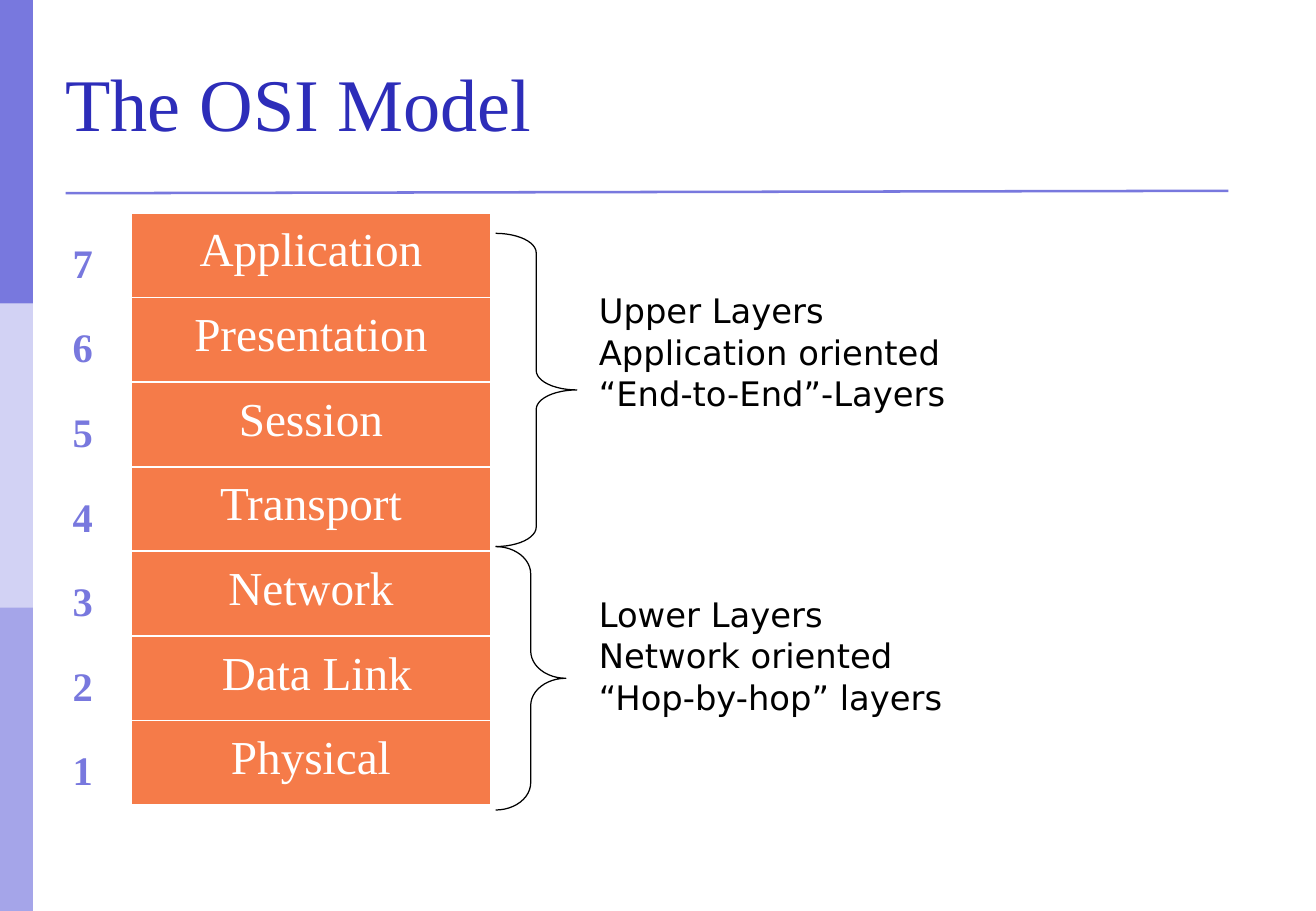
"""Build the slide showing the seven layers of the OSI model."""
from lxml import etree
from pptx import Presentation
from pptx.dml.color import RGBColor
from pptx.enum.shapes import MSO_CONNECTOR, MSO_SHAPE
from pptx.enum.text import MSO_ANCHOR, PP_ALIGN
from pptx.oxml.ns import qn
from pptx.util import Cm, Pt

RECTANGLE = MSO_SHAPE.RECTANGLE
ROUNDED = MSO_SHAPE.ROUNDED_RECTANGLE
BRACE = MSO_SHAPE.RIGHT_BRACE
STRAIGHT = MSO_CONNECTOR.STRAIGHT
TOP, MIDDLE = MSO_ANCHOR.TOP, MSO_ANCHOR.MIDDLE
LEFT, CENTER = PP_ALIGN.LEFT, PP_ALIGN.CENTER

SERIF, SANS = "Times New Roman", "DejaVu Sans"
VIOLET = "7878DE"


def color(hex_code):
    return RGBColor.from_string(hex_code)


def write(shape, text, *, size, ink, font=SERIF, bold=False, align=LEFT,
          anchor=TOP, spacing=0.93, insets=(0.25, 0.18, 0.25, 0.13)):
    frame = shape.text_frame
    frame.word_wrap = True
    frame.vertical_anchor = anchor
    (frame.margin_left, frame.margin_top,
     frame.margin_right, frame.margin_bottom) = map(Cm, insets)
    frame.text = text
    for paragraph in frame.paragraphs:
        paragraph.alignment = align
        paragraph.line_spacing = spacing
        for run in paragraph.runs:
            run.font.name = font
            run.font.size = Pt(size)
            run.font.bold = bold
            run.font.color.rgb = color(ink)


prs = Presentation()
prs.slide_width, prs.slide_height = Cm(27.51), Cm(19.05)
slide = prs.slides.add_slide(prs.slide_layouts[6])
shapes = slide.shapes

band_height = 6.35
for index, tint in enumerate([VIOLET, "D2D2F4", "A5A5E9"]):
    band = shapes.add_shape(RECTANGLE, 0, Cm(index * band_height), Cm(0.69), Cm(band_height))
    band.shadow.inherit = False
    band.fill.solid()
    band.fill.fore_color.rgb = color(tint)
    band.line.fill.background()

title_rule = shapes.add_connector(STRAIGHT, Cm(1.37), Cm(4.04), Cm(25.68), Cm(3.99))
title_rule.line.color.rgb = color(VIOLET)
title_rule.line.width = Pt(1.5)
etree.SubElement(title_rule._element.spPr, qn("a:effectLst"))

title = shapes.add_textbox(Cm(1.37), Cm(0.69), Cm(24.74), Cm(3.23))
write(title, "The OSI Model", size=44, ink="2D2DB9", anchor=MIDDLE,
      spacing=0.78, insets=(0, 0, 0, 0))

layer_groups = [
    (4.88, 1.7, 6.55, 0.24, 5.92,
     "Upper Layers\nApplication oriented\n“End-to-End”-Layers"),
    (11.43, 1.47, 5.51, 0.39, 12.27,
     "Lower Layers\nNetwork oriented\n“Hop-by-hop” layers"),
]
for brace_top, brace_width, brace_height, curl, caption_top, description in layer_groups:
    brace = shapes.add_shape(BRACE, Cm(10.36), Cm(brace_top), Cm(brace_width), Cm(brace_height))
    brace.adjustments[0] = curl
    brace.shadow.inherit = False
    brace.fill.background()
    brace.line.color.rgb = color("000000")
    brace.line.width = Pt(0.75)
    caption = shapes.add_textbox(Cm(12.27), Cm(caption_top), Cm(8.4), Cm(2.87))
    write(caption, description, size=20, ink="000000", font=SANS,
          spacing=1.02, insets=(0.25, 0.13, 0.25, 0.13))

layers = ["Application", "Presentation", "Session", "Transport",
          "Network", " Data Link", "Physical"]
layer_height = 1.77
for index, layer in enumerate(layers):
    layer_top = 4.45 + index * layer_height
    bar = shapes.add_shape(ROUNDED, Cm(2.74), Cm(layer_top), Cm(7.52), Cm(layer_height))
    bar.adjustments[0] = 0
    bar.shadow.inherit = False
    bar.fill.solid()
    bar.fill.fore_color.rgb = color("F57B49")
    bar.line.color.rgb = color("FFFFFF")
    bar.line.width = Pt(1)
    write(bar, layer, size=28, ink="FFFFFF", align=CENTER, insets=(0.25, 0.25, 0.25, 0.13))

    number = shapes.add_textbox(Cm(1.27), Cm(layer_top + 0.43), Cm(0.94), Cm(1.27))
    write(number, str(len(layers) - index), size=24, ink=VIOLET, bold=True)

prs.save("out.pptx")
